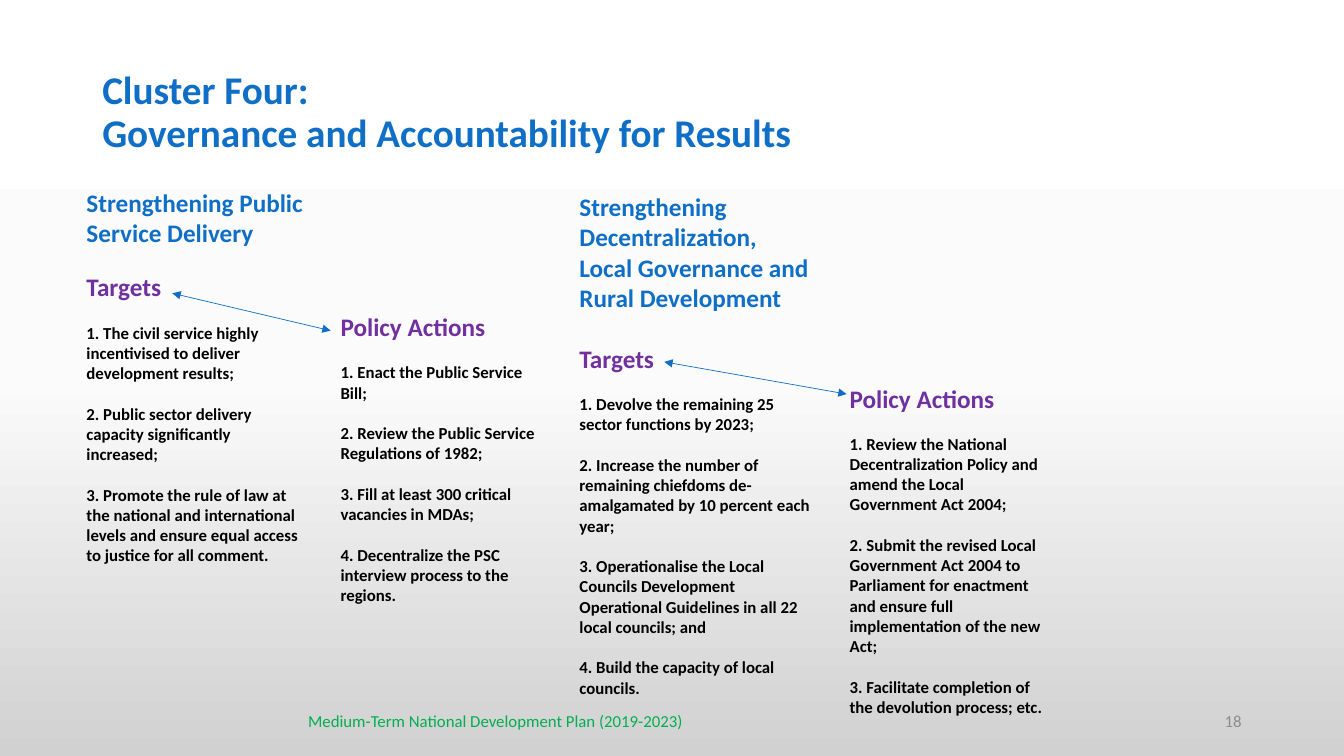
from copy import deepcopy

from lxml.etree import SubElement
from pptx import Presentation
from pptx.dml.color import RGBColor
from pptx.enum.shapes import MSO_CONNECTOR
from pptx.enum.text import MSO_ANCHOR, MSO_AUTO_SIZE, PP_ALIGN
from pptx.oxml.ns import qn
from pptx.util import Pt

FONT = "Calibri"
COLORS = {
    "heading": "0F6FC6",
    "label": "7030A0",
    "body": "000000",
    "footer": "00B050",
    "number": "8C8C8C",
}
BACKGROUND = [(0, "FFFFFF"), (0.5, "FBFBFB"), (1, "D1D1D1")]
ITEM_GAP = 14.65  # one 12 pt line

# Each column: box, heading, gap below the heading, label, items
COLUMNS = [
    ((54.7, 130.3, 169.9, 293), "Strengthening Public Service Delivery", 17.1, "Targets", [
        "1. The civil service highly incentivised to deliver development results;",
        "2. Public sector delivery capacity significantly increased;",
        "3. Promote the rule of law at the national and international levels "
        "and ensure equal access to justice for all comment.",
    ]),
    ((236.2, 218.9, 158.4, 232.6), None, 0, "Policy Actions", [
        "1. Enact the Public Service Bill;",
        "2. Review the Public Service Regulations of 1982;",
        "3. Fill at least 300 critical vacancies in MDAs;",
        "4. Decentralize the PSC interview process to the regions.",
    ]),
    ((406.8, 133.2, 180.7, 370.8),
     "Strengthening Decentralization, Local Governance and Rural Development", 22, "Targets", [
        "1. Devolve the remaining 25 sector functions by 2023;",
        "2. Increase the number of remaining chiefdoms de-amalgamated by 10 percent each year;",
        "3. Operationalise the Local Councils Development Operational Guidelines "
        "in all 22 local councils; and",
        "4. Build the capacity of local councils.",
    ]),
    ((599.8, 270, 161.3, 247), None, 0, "Policy Actions", [
        "1. Review the National Decentralization Policy and amend the Local Government Act 2004;",
        "2. Submit the revised Local Government Act 2004 to Parliament for enactment "
        "and ensure full implementation of the new Act;",
        "3. Facilitate completion of the devolution process; etc.",
    ]),
]
# Arrows from targets to policy actions: x1, y1, x2, y2
ARROWS = [(123.1, 209.5, 236.2, 236.2), (474.5, 258.5, 604.8, 281.5)]


def add_box(s, box, anchor=MSO_ANCHOR.TOP):
    tf = s.shapes.add_textbox(*map(Pt, box)).text_frame
    tf.word_wrap = True
    tf.vertical_anchor = anchor
    return tf


def add_run(p, text, size, color, bold=False):
    r = p.add_run()
    r.text = text
    r.font.name = FONT
    r.font.size = Pt(size)
    r.font.bold = bold
    r.font.color.rgb = RGBColor.from_string(COLORS[color])


def paint_background(s):
    fill = s.background.fill
    fill.gradient()
    fill.gradient_angle = 270
    stop_list = next(s.element.iter(qn("a:gsLst")))
    stop_list.append(deepcopy(stop_list[0]))
    for stop, (position, color) in zip(fill.gradient_stops, BACKGROUND):
        stop.position = position
        stop.color.rgb = RGBColor.from_string(color)


def add_title(s, box, lines):
    p = add_box(s, box, MSO_ANCHOR.MIDDLE).paragraphs[0]
    p.line_spacing = 0.9
    for i, line in enumerate(lines):
        if i:
            p.add_line_break()
        add_run(p, line, 28, "heading", True)


def add_footer(s, box, text, align, color):
    p = add_box(s, box, MSO_ANCHOR.MIDDLE).paragraphs[0]
    p.alignment = align
    add_run(p, text, 12, color)


def add_column(s, box, heading, label_gap, label, items):
    tf = add_box(s, box)
    tf.auto_size = MSO_AUTO_SIZE.SHAPE_TO_FIT_TEXT
    rows = [(heading, 18, "heading", 0)] if heading else []
    rows.append((label, 18, "label", label_gap))
    rows += [(item, 12, "body", ITEM_GAP) for item in items]
    for i, (text, size, color, gap) in enumerate(rows):
        p = tf.add_paragraph() if i else tf.paragraphs[0]
        if gap:
            p.space_before = Pt(gap)
        add_run(p, text, size, color, True)


def add_arrow(s, ends):
    line = s.shapes.add_connector(MSO_CONNECTOR.STRAIGHT, *map(Pt, ends))
    line.line.color.rgb = RGBColor.from_string(COLORS["heading"])
    line.line.width = Pt(0.5)
    ln = line.line._get_or_add_ln()
    for end in ("a:headEnd", "a:tailEnd"):
        SubElement(ln, qn(end), type="triangle")
    SubElement(line._element.spPr, qn("a:effectLst"))


def main():
    prs = Presentation()
    prs.slide_width, prs.slide_height = Pt(960), Pt(540)
    s = prs.slides.add_slide(prs.slide_layouts[6])
    paint_background(s)

    # Title and footer
    add_title(s, (66, 28.8, 828, 104.4),
              ["Cluster Four:", "Governance and Accountability for Results"])
    add_footer(s, (66, 500.5, 576, 28.8), "Medium-Term National Development Plan (2019-2023)",
               PP_ALIGN.CENTER, "footer")
    add_footer(s, (678, 500.5, 216, 28.8), "18", PP_ALIGN.RIGHT, "number")

    # Targets and policy actions
    for column in COLUMNS:
        add_column(s, *column)
    for ends in ARROWS:
        add_arrow(s, ends)

    prs.save("out.pptx")


if __name__ == "__main__":
    main()
